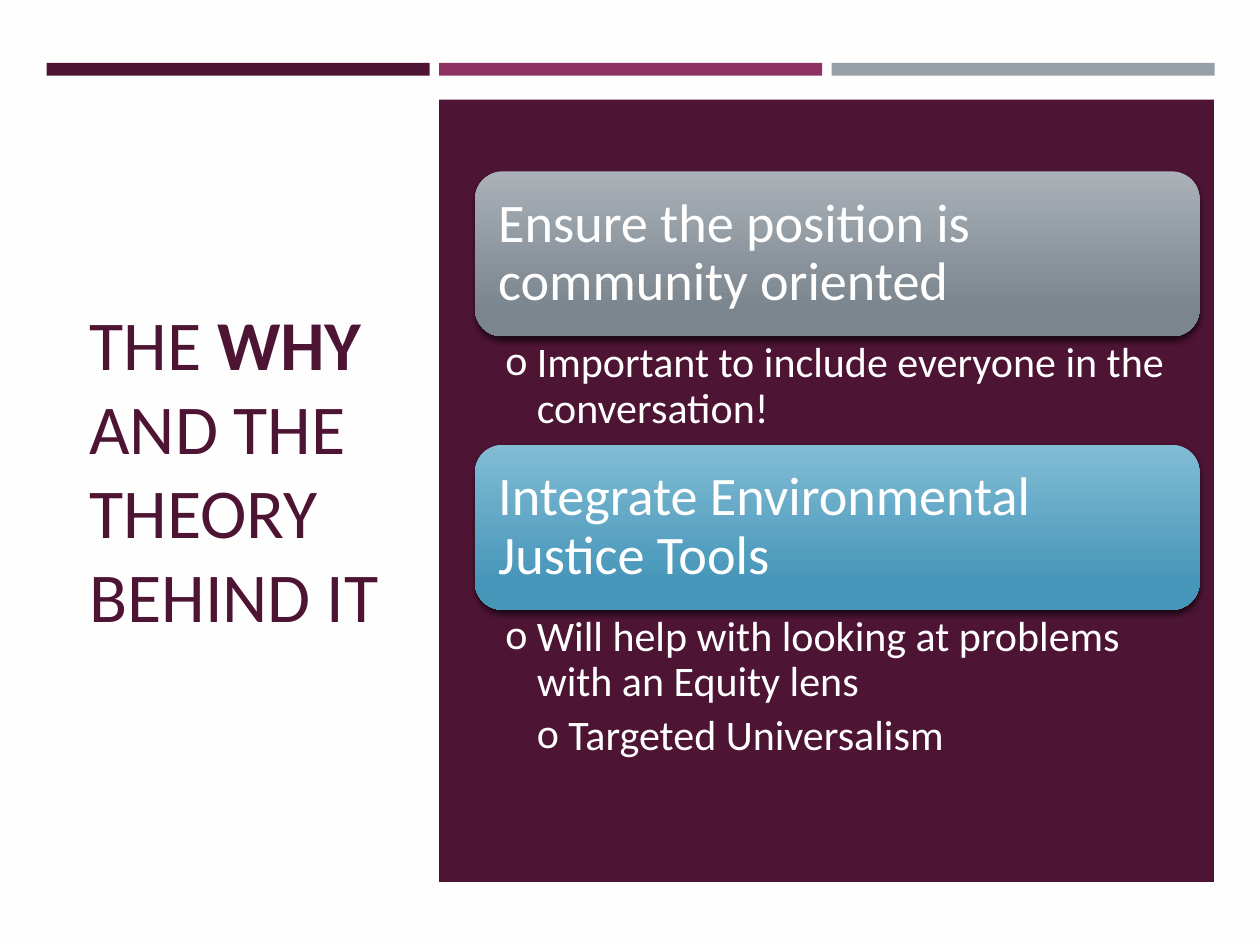
from dataclasses import dataclass

from lxml.etree import SubElement
from pptx import Presentation
from pptx.dml.color import RGBColor as Rgb
from pptx.enum.shapes import MSO_SHAPE as Shape
from pptx.enum.text import MSO_ANCHOR as Anchor, MSO_AUTO_SIZE as Fit, PP_ALIGN as Align
from pptx.oxml.ns import qn
from pptx.util import Inches, Pt


@dataclass(frozen=True)
class Theme:
    font: str = "Calibri"
    paper: str = "FFFEFF"
    white: str = "FFFFFF"
    plum: str = "4D1434"
    rose: str = "903163"
    gray: str = "969FA7"
    steel: tuple = ("AAB1B7", "7A858E")
    blue: tuple = ("82BCD5", "4696B9")
    title: int = 40
    head: int = 31
    body: int = 24


class Deck:
    """Places elements on a grid of 100 columns by 75 rows."""

    def __init__(self, theme):
        self.theme = theme
        self.prs = Presentation()
        self.prs.slide_width, self.prs.slide_height = Inches(10), Inches(7.5)
        self.slide = self.prs.slides.add_slide(self.prs.slide_layouts[5])
        fill = self.slide.background.fill
        fill.solid()
        fill.fore_color.rgb = Rgb.from_string(theme.paper)

    def span(self, *cells):
        """Turn left, top, width and height in grid cells into lengths."""
        sizes = (self.prs.slide_width / 100, self.prs.slide_height / 75) * 2
        return [round(n * size) for n, size in zip(cells, sizes)]

    def frame(self, shape, anchor, side, edge):
        tf = shape.text_frame
        tf.word_wrap, tf.auto_size = True, Fit.NONE
        tf.vertical_anchor = anchor
        tf.margin_left = tf.margin_right = Inches(side)
        tf.margin_top = tf.margin_bottom = Inches(edge)
        return tf

    def style(self, para, size, color, lines=0.9):
        para.alignment = Align.LEFT
        para.line_spacing = lines
        para.font.name, para.font.size = self.theme.font, Pt(size)
        para.font.color.rgb = Rgb.from_string(color)

    def title(self, cells, parts):
        """Fill the title from (text, bold) parts."""
        shape = self.slide.shapes.title
        shape.left, shape.top, shape.width, shape.height = self.span(*cells)
        para = self.frame(shape, Anchor.MIDDLE, 0.1, 0.05).paragraphs[0]
        self.style(para, self.theme.title, self.theme.plum, 1.0)
        for text, bold in parts:
            run = para.add_run()
            run.text, run.font.bold = text, bold

    def block(self, cells, color):
        shape = self.slide.shapes.add_shape(Shape.RECTANGLE, *self.span(*cells))
        shape.shadow.inherit = False
        shape.fill.solid()
        shape.fill.fore_color.rgb = Rgb.from_string(color)
        shape.line.fill.background()

    def card(self, cells, colors, text):
        shape = self.slide.shapes.add_shape(Shape.ROUNDED_RECTANGLE, *self.span(*cells))
        shape.line.fill.background()
        shape.fill.gradient()
        shape.fill.gradient_angle = 270
        for stop, color, place in zip(shape.fill.gradient_stops, colors, (0, 0.84)):
            stop.color.rgb, stop.position = Rgb.from_string(color), place
        self.shade(shape)
        tf = self.frame(shape, Anchor.MIDDLE, 0.12, 0.13)
        tf.text = text
        self.style(tf.paragraphs[0], self.theme.head, self.theme.white)

    def shade(self, shape):
        """Give the shape a soft black shadow below it."""
        shape.shadow.inherit = False
        effects = shape.fill._xPr.find(qn("a:effectLst"))
        outer = SubElement(effects, qn("a:outerShdw"), blurRad=str(Pt(3)),
                           dist=str(Pt(2)), dir="5400000", rotWithShape="0")
        black = SubElement(outer, qn("a:srgbClr"), val="000000")
        SubElement(black, qn("a:alpha"), val="55000")

    def points(self, cells, items):
        """List the items, each one level deeper than the last."""
        box = self.slide.shapes.add_textbox(*self.span(*cells))
        tf = self.frame(box, Anchor.TOP, 0.24, 0.04)
        for level, text in enumerate(items, 1):
            para = tf.paragraphs[0] if level == 1 else tf.add_paragraph()
            para.text, para.level = text, level
            self.style(para, self.theme.body, self.theme.white)
            para.space_before = Pt(4.8 * (level - 1))
            props = para._p.get_or_add_pPr()
            props.set("marL", str(Inches(0.25 * level)))
            props.set("indent", str(Inches(-0.25)))
            SubElement(props, qn("a:buFont"), typeface=self.theme.font)
            SubElement(props, qn("a:buChar"), char="o")


def main():
    theme = Theme()
    deck = Deck(theme)
    deck.title((6.1, 11.4, 25, 51.5),
               [("THE ", False), ("WHY", True), (" AND THE THEORY BEHIND IT", False)])

    left, step = 3.7, 31.15
    for col, color in enumerate((theme.plum, theme.rose, theme.gray)):
        deck.block((left + col * step, 5, 30.4, 1), color)
    deck.block((left + step, 7.9, 61.5, 62.1), theme.plum)

    topics = [
        (theme.steel, "Ensure the position is community oriented",
         ["Important to include everyone in the conversation!"]),
        (theme.blue, "Integrate Environmental Justice Tools",
         ["Will help with looking at problems with an Equity lens",
          "Targeted Universalism"]),
    ]
    side, width, tall = 37.7, 57.5, 13.1
    for row, (colors, head, items) in enumerate(topics):
        top = 13.6 + row * 21.7
        deck.card((side, top, width, tall), colors, head)
        deck.points((side, top + tall, width, 4.9 + 3.7 * len(items)), items)

    deck.prs.save("out.pptx")


if __name__ == "__main__":
    main()
